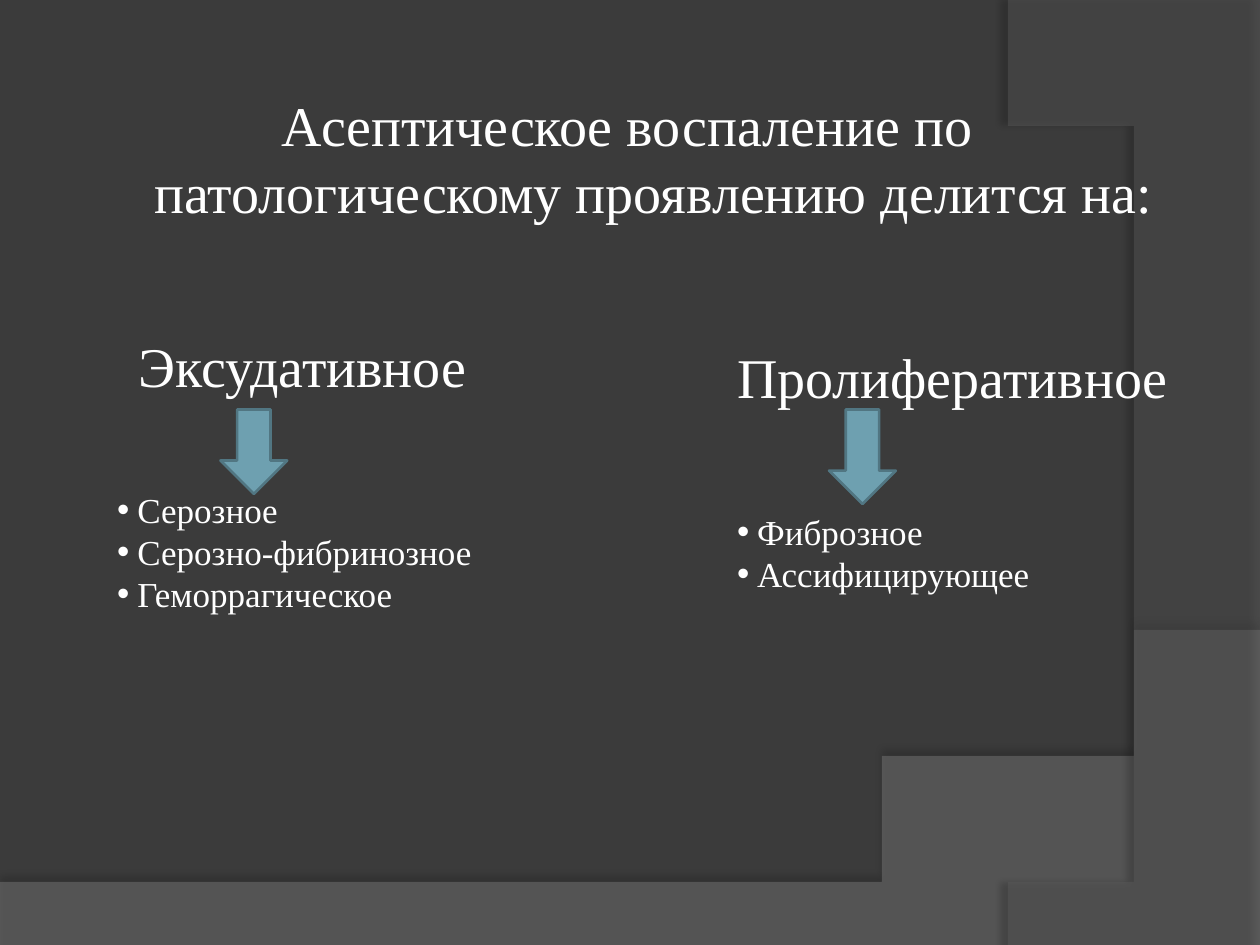
import pptx
import pptx.util
import pptx.dml.color
import pptx.enum.shapes
import pptx.enum.text
import pptx.oxml
import pptx.oxml.ns

Inches, Pt = pptx.util.Inches, pptx.util.Pt
WIDTH, HEIGHT = 10, 7.5
FONT = "Times New Roman"
COLORS = {"background": "3B3B3B", "text": "FFFFFF", "wave": "7F7F7F",
          "arc": "5E5E5E", "arrow": "6EA0B0", "arrow_edge": "517682",
          "shadow": "000000"}


def rgb(name):
    return pptx.dml.color.RGBColor.from_string(COLORS[name])


def xml(markup):
    ns = pptx.oxml.ns.nsdecls("a")
    return pptx.oxml.parse_xml(markup.replace(" ", f" {ns} ", 1))


def place(shape, left, top, width, height):
    shape.left, shape.top = Inches(left), Inches(top)
    shape.width, shape.height = Inches(width), Inches(height)


def curve(start, control1, control2, end, steps=60):
    """Points along a cubic Bezier curve."""
    for step in range(steps + 1):
        t = step / steps
        u = 1 - t
        weights = (u**3, 3 * u * u * t, 3 * u * t * t, t**3)
        yield tuple(sum(w * p[axis] for w, p in
                        zip(weights, (start, control1, control2, end)))
                    for axis in (0, 1))


def add_backdrop(slide, depth, points, color, opacity, shadow):
    """Translucent curved area with a soft shadow, behind the text."""
    points = list(points)
    builder = slide.shapes.build_freeform(*points[0], scale=Inches(1))
    builder.add_line_segments(points[1:], close=True)
    area = builder.convert_to_shape()
    area.fill.solid()
    area.fill.fore_color.rgb = rgb(color)
    area.line.fill.background()
    properties = area._element.spPr
    properties.find(".//" + pptx.oxml.ns.qn("a:srgbClr")).append(
        xml(f'<a:alpha val="{opacity * 1000}"/>'))
    alpha, blur, distance, angle = shadow
    properties.append(xml(
        f'<a:effectLst ><a:outerShdw blurRad="{Pt(blur)}" dist="{Pt(distance)}" '
        f'dir="{angle * 60000}" algn="ctr" rotWithShape="0">'
        f'<a:srgbClr val="{COLORS["shadow"]}"><a:alpha val="{alpha * 1000}"/>'
        '</a:srgbClr></a:outerShdw></a:effectLst>'))
    slide.shapes._spTree.insert(2 + depth, area._element)


def write(placeholder, lines, size, hanging=None, bullet=None, centered=False, wrap=False):
    frame = placeholder.text_frame
    frame.text = "\n".join(lines)
    frame.auto_size = pptx.enum.text.MSO_AUTO_SIZE.NONE
    frame.word_wrap = wrap
    frame.vertical_anchor = pptx.enum.text.MSO_ANCHOR.TOP
    align = pptx.enum.text.PP_ALIGN
    margin, indent = hanging or (0, 0)
    for paragraph in frame.paragraphs:
        properties = paragraph._p.get_or_add_pPr()
        properties.set("marL", str(Inches(margin)))
        properties.set("indent", str(Inches(indent)))
        properties.append(xml(f'<a:buChar char="{bullet}"/>' if bullet else "<a:buNone />"))
        paragraph.alignment = align.CENTER if centered else align.LEFT
        paragraph.space_before = Pt(0)
        paragraph.font.name, paragraph.font.size = FONT, Pt(size)
        paragraph.font.bold = False
        paragraph.font.color.rgb = rgb("text")


def add_arrow(slide, box):
    arrow = slide.shapes.add_shape(pptx.enum.shapes.MSO_SHAPE.DOWN_ARROW,
                                   *(Inches(length) for length in box))
    arrow.shadow.inherit = False
    arrow.fill.solid()
    arrow.fill.fore_color.rgb = rgb("arrow")
    arrow.line.color.rgb = rgb("arrow_edge")
    arrow.line.width = Pt(1.5)


def add_branch(slide, heading, kinds, box, first_idx):
    """Heading, arrow and list; parts are (left, top, width, height) in the box."""
    left, top = box["origin"]

    def absolute(part):
        x, y, width, height = box[part]
        return left + x, top + y, width, height

    heading_holder, list_holder = (slide.placeholders[first_idx + i] for i in (0, 1))
    place(heading_holder, *absolute("heading"))
    write(heading_holder, [heading], 32)
    place(list_holder, *absolute("list"))
    write(list_holder, kinds, 20, hanging=(0.16, -0.16), bullet="•")
    add_arrow(slide, absolute("arrow"))


def main():
    deck = pptx.Presentation()
    deck.slide_width, deck.slide_height = Inches(WIDTH), Inches(HEIGHT)
    slide = deck.slides.add_slide(deck.slide_layouts.get_by_name("Comparison"))
    slide.background.fill.solid()
    slide.background.fill.fore_color.rgb = rgb("background")

    # Curved backdrop
    wave = [(0, HEIGHT), (WIDTH, HEIGHT),
            *curve((WIDTH, 5.2), (5.59, 7.29), (3.91, 7.19), (0, 7.05))]
    arc = [(WIDTH, 0.02), (WIDTH, HEIGHT),
           *curve((8.21, HEIGHT), (9.35, 6.19), (10.18, 3), (8, 0))]
    add_backdrop(slide, 0, wave, "wave", 45, (35, 4, 3.5, 270))
    add_backdrop(slide, 1, arc, "arc", 40, (45, 4, 4, 180))

    # Title
    title = slide.shapes.title
    place(title, 0.5, 0.67, 8.92, 1.33)
    write(title, ["Асептическое воспаление по патологическому проявлению делится на:"],
          32, hanging=(0.46, -0.42), centered=True, wrap=True)

    # Two kinds of inflammation
    add_branch(slide, "Эксудативное",
               ["Серозное", "Серозно-фибринозное", "Геморрагическое"],
               {"origin": (0.83, 2.58), "heading": (0.17, 0, 2.83, 0.64),
                "arrow": (0.92, 0.67, 0.53, 0.67), "list": (0, 1.25, 3.42, 1.11)}, 1)
    add_branch(slide, "Пролиферативное", ["Фиброзное", "Ассифицирующее"],
               {"origin": (5.75, 2.67), "heading": (0, 0, 3.66, 0.64),
                "arrow": (0.83, 0.58, 0.53, 0.75), "list": (0, 1.33, 2.55, 0.77)}, 3)

    deck.save("out.pptx")


if __name__ == "__main__":
    main()
